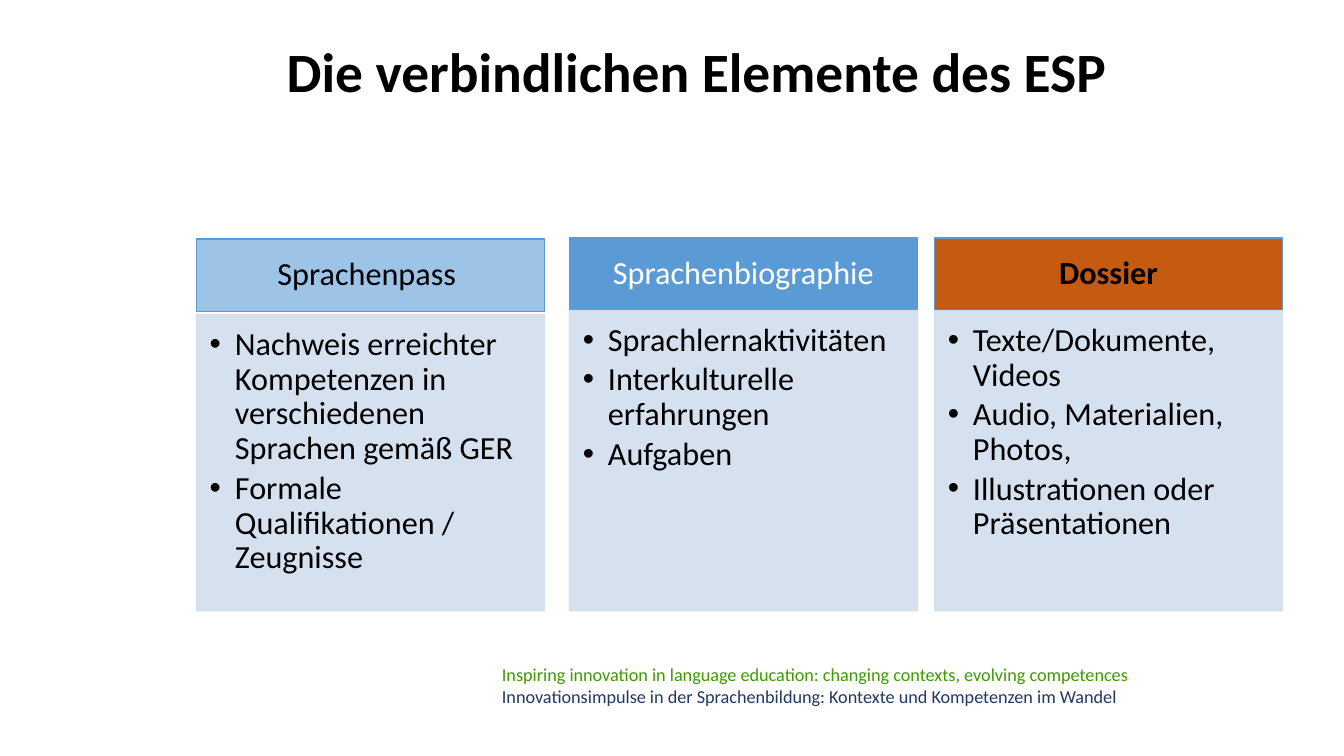
import pptx
import pptx.dml.color
import pptx.enum.shapes
import pptx.enum.text
import pptx.oxml
import pptx.oxml.ns
import pptx.util
from lxml import etree

Inches = pptx.util.Inches
Pt = pptx.util.Pt
ALIGN = pptx.enum.text.PP_ALIGN
ANCHOR = pptx.enum.text.MSO_ANCHOR
qn = pptx.oxml.ns.qn

FONT = "Calibri"
COLORS = {
    "black": "000000",
    "white": "FFFFFF",
    "light_blue": "9DC3E6",
    "blue": "5B9BD5",
    "orange": "C55A11",
    "panel": "D2DEEF",
    "green": "3C9B00",
    "navy": "203864",
}
COLUMN_WIDTH = 3.45
HEADER_HEIGHT = 0.72
COLUMN_BOTTOM = 6.06

COLUMNS = [
    {"left": 1.95, "top": 2.37, "gap": 0.03, "heading": "Sprachenpass ",
     "fill": "light_blue", "text": "black", "bold": False,
     "items": ["Nachweis erreichter Kompetenzen in verschiedenen Sprachen gemäß GER",
               "Formale Qualifikationen / Zeugnisse"]},
    {"left": 5.65, "top": 2.36, "gap": 0, "heading": "Sprachenbiographie",
     "fill": "blue", "text": "white", "bold": False,
     "items": ["Sprachlernaktivitäten", "Interkulturelle erfahrungen", "Aufgaben"]},
    {"left": 9.27, "top": 2.36, "gap": 0, "heading": "Dossier",
     "fill": "orange", "text": "black", "bold": True,
     "items": ["Texte/Dokumente, Videos", "Audio, Materialien, Photos,",
               "Illustrationen oder Präsentationen"]},
]


def color(name):
    return pptx.dml.color.RGBColor.from_string(COLORS[name])


def set_font(paragraph, size, color_name, bold=False):
    paragraph.font.name = FONT
    paragraph.font.size = Pt(size)
    paragraph.font.bold = bold
    paragraph.font.color.rgb = color(color_name)


def set_frame(frame, anchor, margins):
    frame.word_wrap = True
    frame.vertical_anchor = anchor
    (frame.margin_left, frame.margin_top,
     frame.margin_right, frame.margin_bottom) = [Inches(margin) for margin in margins]


def add_bullet(paragraph):
    properties = paragraph._p.get_or_add_pPr()
    properties.set("marL", str(Inches(0.25)))
    properties.set("indent", str(-Inches(0.25)))
    etree.SubElement(properties, qn("a:buFont"), typeface="Arial")
    etree.SubElement(properties, qn("a:buChar"), char="•")


def add_rectangle(slide, left, top, width, height, fill_name, line_name):
    shape = slide.shapes.add_shape(
        pptx.enum.shapes.MSO_SHAPE.RECTANGLE,
        Inches(left), Inches(top), Inches(width), Inches(height))
    shape.shadow.inherit = False
    shape.fill.solid()
    shape.fill.fore_color.rgb = color(fill_name)
    shape.line.color.rgb = color(line_name)
    shape.line.width = Pt(1)
    return shape


def add_title(slide, left, top, width, height):
    title = slide.shapes.title
    title.left, title.top = Inches(left), Inches(top)
    title.width, title.height = Inches(width), Inches(height)
    frame = title.text_frame
    frame.text = "Die verbindlichen Elemente des ESP"
    frame.auto_size = pptx.enum.text.MSO_AUTO_SIZE.NONE
    set_frame(frame, ANCHOR.MIDDLE, (0.1, 0.05, 0.1, 0.05))
    paragraph = frame.paragraphs[0]
    paragraph.alignment = ALIGN.CENTER
    paragraph.line_spacing = 0.9
    set_font(paragraph, 39.6, "black", True)


def add_header(slide, column, left, top, width, height):
    header = add_rectangle(slide, left, top, width, height, column["fill"], "blue")
    frame = header.text_frame
    frame.text = column["heading"]
    set_frame(frame, ANCHOR.MIDDLE, (0.18, 0.1, 0.18, 0.1))
    paragraph = frame.paragraphs[0]
    paragraph.alignment = ALIGN.CENTER
    paragraph.line_spacing = 0.9
    paragraph.space_after = Pt(8)
    set_font(paragraph, 23, column["text"], column["bold"])


def add_panel(slide, items, left, top, width, height):
    panel = add_rectangle(slide, left, top, width, height, "panel", "panel")
    for fill in panel._element.spPr.iter(qn("a:srgbClr")):
        etree.SubElement(fill, qn("a:alpha"), val="90000")
    frame = panel.text_frame
    frame.text = "\n".join(items)
    set_frame(frame, ANCHOR.TOP, (0.13, 0.13, 0.18, 0.2))
    for paragraph in frame.paragraphs:
        paragraph.alignment = ALIGN.LEFT
        paragraph.line_spacing = 0.9
        paragraph.space_after = Pt(3.45)
        add_bullet(paragraph)
        set_font(paragraph, 23, "black")


def add_column(slide, column, left, top, width, height):
    add_header(slide, column, left, top, width, HEADER_HEIGHT)
    offset = HEADER_HEIGHT + column["gap"]
    add_panel(slide, column["items"], left, top + offset, width, height - offset)


def add_motto(slide, left, top, width, height):
    box = slide.shapes.add_textbox(
        Inches(left), Inches(top), Inches(width), Inches(height))
    frame = box.text_frame
    frame.text = (
        "Inspiring innovation in language education: changing contexts, evolving competences\n"
        "Innovationsimpulse in der Sprachenbildung: Kontexte und Kompetenzen im Wandel")
    set_frame(frame, ANCHOR.TOP, (0.1, 0.05, 0.1, 0.05))
    for paragraph, color_name in zip(frame.paragraphs, ("green", "navy")):
        set_font(paragraph, 13, color_name)


def main():
    presentation = pptx.Presentation()
    presentation.slide_width = Inches(13.33)
    presentation.slide_height = Inches(7.5)
    slide = presentation.slides.add_slide(presentation.slide_layouts[5])
    add_motto(slide, 4.88, 6.53, 7.2, 0.54)
    add_title(slide, 1.16, 0.4, 11.5, 0.68)
    for column in COLUMNS:
        add_column(slide, column, column["left"], column["top"],
                   COLUMN_WIDTH, COLUMN_BOTTOM - column["top"])
    presentation.save("out.pptx")


if __name__ == "__main__":
    main()
